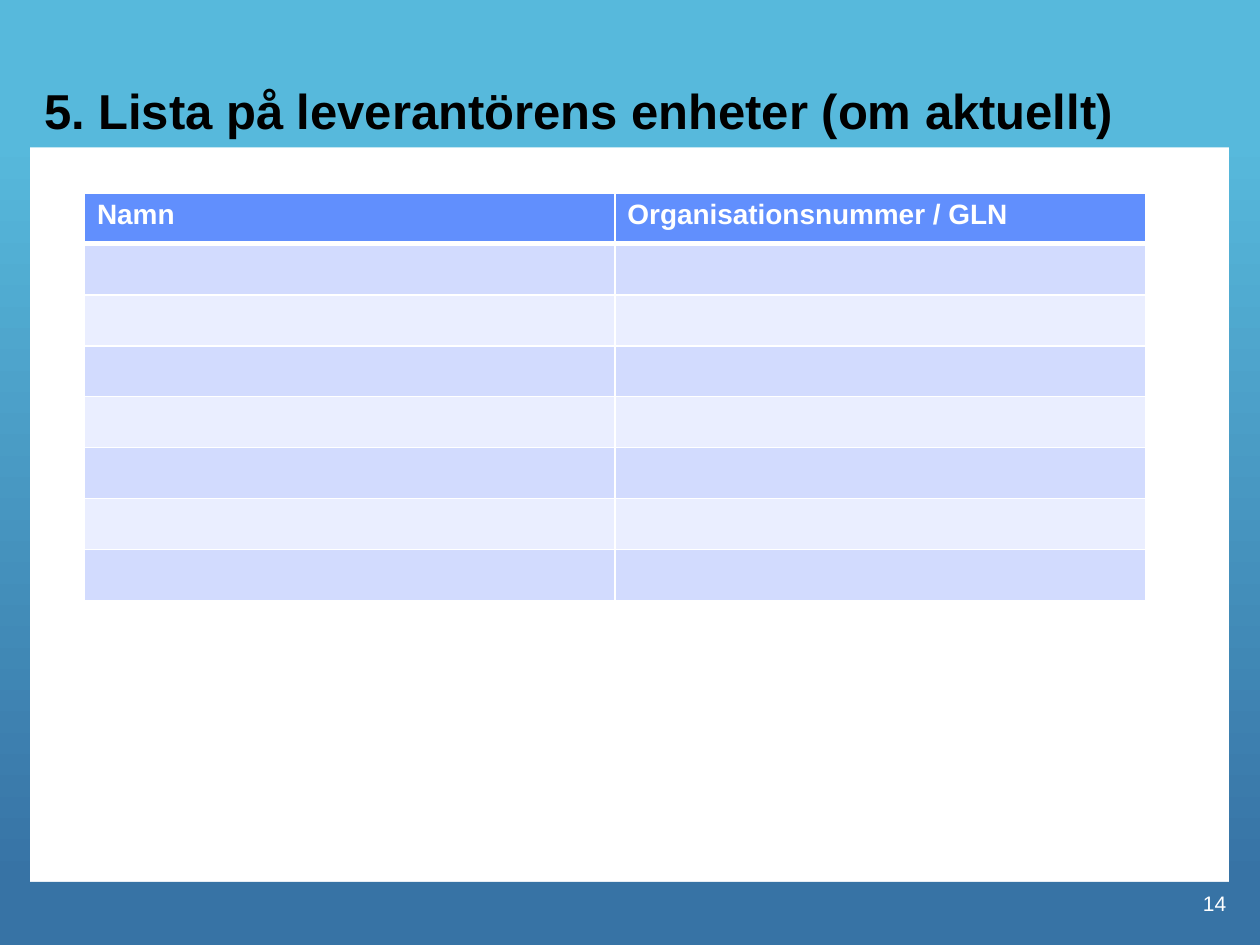
from dataclasses import dataclass

from lxml import etree
from pptx import Presentation
from pptx import util as u
from pptx.dml.color import RGBColor
from pptx.enum import shapes, text
from pptx.oxml import ns


@dataclass
class Theme:
    font: str = "Arial"
    sky: str = "57B9DC"
    sea: str = "3773A5"
    head: str = "618FFD"
    odd: str = "D2DBFE"
    even: str = "EAEEFF"
    white: str = "FFFFFF"
    black: str = "000000"
    title: int = 28
    cell: int = 16
    page: int = 12


theme = Theme()
deck = Presentation()
deck.slide_width, deck.slide_height = u.Inches(10), u.Inches(7.5)
col, row = deck.slide_width / 40, deck.slide_height / 30
slide = deck.slides.add_slide(deck.slide_layouts[5])


def grid(x, y, wide, high):
    """Turn columns and rows of the slide grid into lengths."""
    return [u.Emu(round(n)) for n in (x * col, y * row, wide * col, high * row)]


def write(frame, words, size, color, bold=False, align=text.PP_ALIGN.LEFT):
    """Add one formatted run to the first paragraph of a frame."""
    para = frame.paragraphs[0]
    para.alignment = align
    run = para.add_run()
    run.text = words
    run.font.name, run.font.size, run.font.bold = theme.font, u.Pt(size), bold
    run.font.color.rgb = RGBColor.from_string(color)


# Frame: two shaded sides, then the flat bands at top and bottom
sky, sea = RGBColor.from_string(theme.sky), RGBColor.from_string(theme.sea)
bands = [
    ((0, 4.32, 0.96, 23.68), None),
    ((39, 4.32, 1, 23.68), None),
    ((0, 28, 40, 2), sea),
    ((0, 0, 40, 4.68), sky),
]
for place, color in bands:
    band = slide.shapes.add_shape(shapes.MSO_SHAPE.RECTANGLE, *grid(*place))
    band.shadow.inherit = False
    band.line.fill.background()
    if color is not None:
        band.fill.solid()
        band.fill.fore_color.rgb = color
    else:
        band.fill.gradient()
        band.fill.gradient_angle = 270
        for stop, shade in zip(band.fill.gradient_stops, (sky, sea)):
            stop.color.rgb = shade

# Title, brought in front of the bands
title = slide.shapes.title
title.left, title.top, title.width, title.height = grid(1, 1.64, 38, 3)
title.element.getparent().append(title.element)
title.text_frame.vertical_anchor = text.MSO_ANCHOR.BOTTOM
title.text_frame.word_wrap = True
write(title.text_frame, "5. Lista på leverantörens enheter (om aktuellt)",
      theme.title, theme.black, bold=True)

# Page number
page = slide.shapes.add_textbox(*grid(31, 27.68, 8.32, 2)).text_frame
page.word_wrap = True
page.vertical_anchor = text.MSO_ANCHOR.MIDDLE
write(page, "14", theme.page, theme.white, align=text.PP_ALIGN.RIGHT)

# Table of units
heads = ["Namn", "Organisationsnummer / GLN"]
count = 8
table = slide.shapes.add_table(
    count, len(heads), *grid(2.68, 6.12, 33.68, 12.96)).table
for r in range(count):
    for c, head in enumerate(heads):
        cell = table.cell(r, c)
        props = cell._tc.get_or_add_tcPr()
        for side in "LRTB":
            thick = (r, side) in ((0, "B"), (1, "T"))
            edge = etree.SubElement(props, ns.qn(f"a:ln{side}"),
                                    w=str(u.Pt(3 if thick else 1)))
            paint = etree.SubElement(edge, ns.qn("a:solidFill"))
            etree.SubElement(paint, ns.qn("a:srgbClr"), val=theme.white)
        fill = theme.head if r == 0 else theme.odd if r % 2 else theme.even
        cell.fill.solid()
        cell.fill.fore_color.rgb = RGBColor.from_string(fill)
        if r == 0:
            write(cell.text_frame, head, theme.cell, theme.white, bold=True)
        else:
            cell.text_frame.paragraphs[0].font.size = u.Pt(theme.cell)

deck.save("out.pptx")
